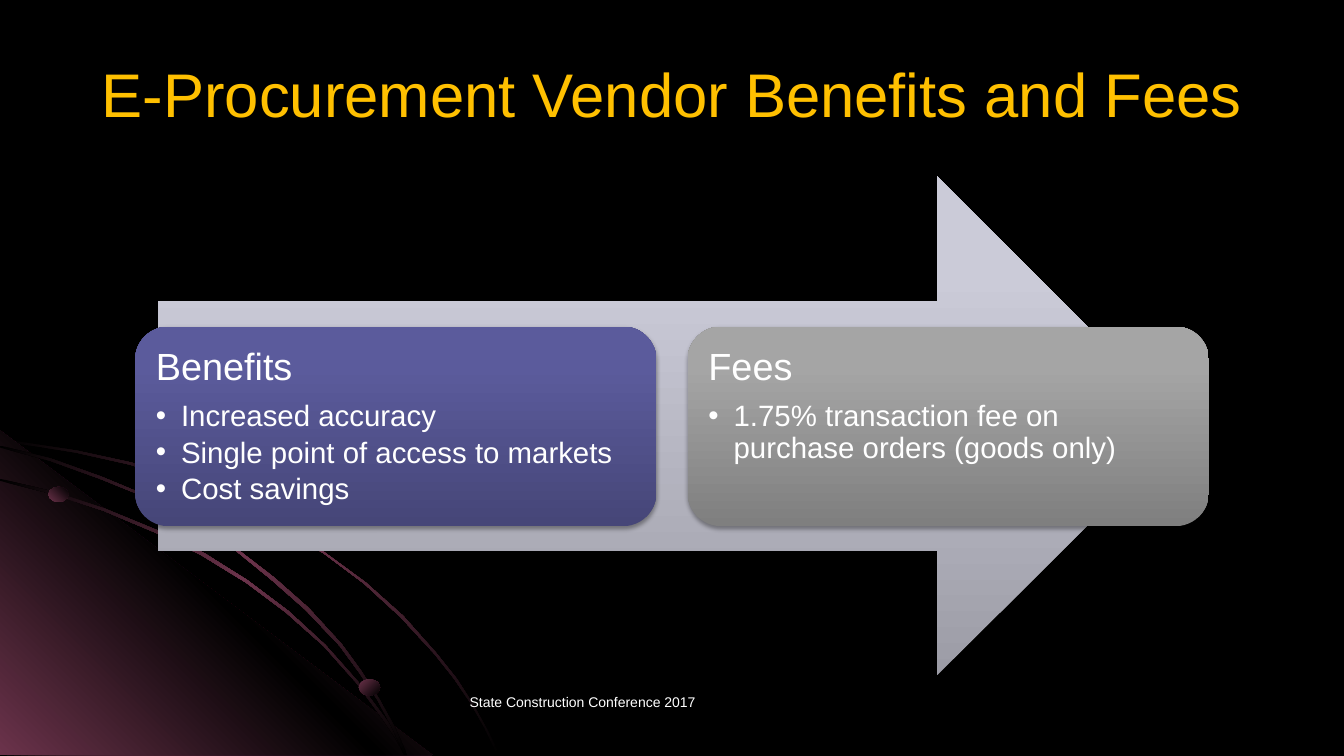
from lxml import etree
from pptx import Presentation
from pptx.dml.color import RGBColor
from pptx.enum import shapes, text
from pptx.oxml import ns
from pptx.util import Inches, Pt

FONT = "Arial"
WHITE, BLACK, GOLD, PLUM = "FFFFFF", "000000", "FFC000", "6B334B"

TITLE = "E-Procurement Vendor Benefits and Fees"
FOOTER = "State Construction Conference 2017"
CARDS = [
    ("Benefits",
     ["Increased accuracy", "Single point of access to markets", "Cost savings"],
     [(0, "464678"), (80, "5B5B9C"), (100, "5B5B9E")]),
    ("Fees",
     ["1.75% transaction fee on purchase orders (goods only)"],
     [(0, "7F7F7F"), (80, "A5A5A5"), (100, "A5A5A5")]),
]
ARROW_STOPS = [(0, "9C9CA6"), (80, "CBCBD8"), (100, "CCCCD9")]
RIBBON_STOPS = [(0, BLACK), (50, PLUM), (100, BLACK)]
CORNER_STOPS = [(0, PLUM), (50, BLACK), (100, PLUM)]
BEAD_STOPS = [(0, PLUM), (100, BLACK)]

# Corner decoration, in inches
OUTER_RIBBON = [
    (0.76, 4.47), (0.37, 4.41), (0, 4.35), (0, 4.38), (0.37, 4.43), (0.75, 4.49),
    (1.29, 4.61), (1.8, 4.78), (2.31, 4.99), (2.78, 5.23), (3.21, 5.49), (3.61, 5.79),
    (3.97, 6.12), (4.31, 6.49), (4.5, 6.73), (4.67, 6.98), (4.81, 7.23), (4.93, 7.49),
    (4.96, 7.49), (4.83, 7.23), (4.69, 6.98), (4.53, 6.73), (4.33, 6.48), (4, 6.11),
    (3.63, 5.78), (3.22, 5.48), (2.79, 5.21), (2.32, 4.97), (1.82, 4.77), (1.31, 4.59),
]
CORNER = [(4.29, 7.49), (0, 7.49), (0, 4.27)]
LOWER_RIBBON = [
    (3.8, 7.14), (3.92, 7.32), (4.01, 7.49), (4.04, 7.49), (3.94, 7.3), (3.82, 7.12),
    (3.55, 6.76), (3.23, 6.4), (2.86, 6.06), (2.46, 5.76), (2.03, 5.49), (1.56, 5.26),
    (1.05, 5.05), (0.54, 4.88), (0, 4.75), (0, 4.77), (0.51, 4.9), (1.03, 5.07),
    (1.53, 5.28), (2, 5.51), (2.44, 5.78), (2.84, 6.08), (3.21, 6.41), (3.53, 6.77),
]
MIDDLE_RIBBON = [
    (0, 4.42), (0, 4.44), (0.49, 4.57), (0.99, 4.75), (1.46, 4.94), (1.89, 5.18),
    (2.31, 5.44), (2.69, 5.75), (3.03, 6.05), (3.37, 6.41), (3.56, 6.67), (3.74, 6.94),
    (3.89, 7.22), (4.01, 7.49), (4.04, 7.49), (3.91, 7.2), (3.76, 6.93), (3.58, 6.65),
    (3.39, 6.39), (3.06, 6.03), (2.72, 5.73), (2.33, 5.43), (1.91, 5.16), (1.49, 4.93),
    (1.01, 4.73), (0.51, 4.55),
]
OUTLINES = [
    (OUTER_RIBBON, RIBBON_STOPS, 45),
    (CORNER, CORNER_STOPS, 315),
    (LOWER_RIBBON, RIBBON_STOPS, 45),
    (MIDDLE_RIBBON, RIBBON_STOPS, 45),
]
BEADS = [((0.48, 4.83, 0.2, 0.15), 315), ((3.56, 6.74, 0.21, 0.16), 45)]

CARD_LEFT, CARD_TOP, CARD_WIDTH, CARD_HEIGHT = 1.34, 3.24, 5.17, 1.98
CARD_GAP = 0.31
CARD_INSET = 0.11


def color(hex_code):
    return RGBColor.from_string(hex_code)


def add_node(parent, tag, **attributes):
    node = etree.SubElement(parent, ns.qn(tag))
    for key, value in attributes.items():
        node.set(key, str(value))
    return node


def paint(shape, stops, angle):
    """Fill with a linear gradient (clockwise degrees), without line or shadow."""
    shape.shadow.inherit = False
    shape.line.fill.background()
    shape.fill.gradient()
    gradient = shape._element.spPr.find(ns.qn("a:gradFill"))
    for child in list(gradient):
        gradient.remove(child)
    stop_list = add_node(gradient, "a:gsLst")
    for position, hex_code in stops:
        stop = add_node(stop_list, "a:gs", pos=position * 1000)
        add_node(stop, "a:srgbClr", val=hex_code)
    add_node(gradient, "a:lin", ang=angle * 60000, scaled=0)


def add_soft_shadow(shape):
    effects = shape._element.spPr.find(ns.qn("a:effectLst"))
    shadow = add_node(effects, "a:outerShdw", blurRad=Pt(3.1), dist=Pt(1.8),
                      dir=90 * 60000, rotWithShape=0)
    add_node(add_node(shadow, "a:srgbClr", val=BLACK), "a:alpha", val=35000)


def style(paragraph, size, hex_code, align=text.PP_ALIGN.LEFT):
    paragraph.alignment = align
    for run in paragraph.runs:
        run.font.name = FONT
        run.font.size = Pt(size)
        run.font.color.rgb = color(hex_code)


def add_preset(slide, kind, box, stops, angle):
    shape = slide.shapes.add_shape(kind, *map(Inches, box))
    paint(shape, stops, angle)
    return shape


def add_outline(slide, points, stops, angle):
    corners = [(Inches(x), Inches(y)) for x, y in points]
    builder = slide.shapes.build_freeform(*corners[0])
    builder.add_line_segments(corners[1:], close=True)
    paint(builder.convert_to_shape(), stops, angle)


def add_label(slide, box, wording, size, hex_code, align, anchor):
    frame = slide.shapes.add_textbox(*map(Inches, box)).text_frame
    frame.word_wrap = True
    frame.vertical_anchor = anchor
    frame.text = wording
    style(frame.paragraphs[0], size, hex_code, align)


def add_card(slide, left, heading, points, stops):
    card = add_preset(slide, shapes.MSO_SHAPE.ROUNDED_RECTANGLE,
                      (left, CARD_TOP, CARD_WIDTH, CARD_HEIGHT), stops, 270)
    add_soft_shadow(card)
    frame = card.text_frame
    frame.word_wrap = True
    frame.vertical_anchor = text.MSO_ANCHOR.TOP
    frame.margin_left = frame.margin_right = Inches(CARD_INSET)
    frame.margin_top = frame.margin_bottom = Inches(CARD_INSET)
    frame.text = "\n".join([heading, *points])
    for index, paragraph in enumerate(frame.paragraphs):
        is_point = index > 0
        size, after = (21, 0.15) if is_point else (27, 0.35)
        style(paragraph, size, WHITE)
        paragraph.line_spacing = 0.9
        paragraph.space_after = Pt(size * after)
        if is_point:
            paragraph.level = 1
            properties = paragraph._p.get_or_add_pPr()
            properties.set("marL", str(Inches(0.25)))
            properties.set("indent", str(Inches(-0.25)))
            add_node(properties, "a:buFont", typeface=FONT)
            add_node(properties, "a:buChar", char="•")


def main():
    deck = Presentation()
    deck.slide_width, deck.slide_height = Inches(13.33), Inches(7.5)
    slide = deck.slides.add_slide(deck.slide_layouts[6])
    slide.background.fill.solid()
    slide.background.fill.fore_color.rgb = color(BLACK)

    for points, stops, angle in OUTLINES:
        add_outline(slide, points, stops, angle)
    for box, angle in BEADS:
        add_preset(slide, shapes.MSO_SHAPE.OVAL, box, BEAD_STOPS, angle)

    add_label(slide, (0.67, 0.3, 12, 1.25), TITLE, 44, GOLD,
              text.PP_ALIGN.CENTER, text.MSO_ANCHOR.MIDDLE)
    add_preset(slide, shapes.MSO_SHAPE.RIGHT_ARROW, (1.57, 1.75, 10.2, 4.95),
               ARROW_STOPS, 270)
    for index, (heading, points, stops) in enumerate(CARDS):
        left = CARD_LEFT + index * (CARD_WIDTH + CARD_GAP)
        add_card(slide, left, heading, points, stops)
    add_label(slide, (4.56, 6.83, 4.22, 0.5), FOOTER, 10, WHITE,
              text.PP_ALIGN.LEFT, text.MSO_ANCHOR.TOP)

    deck.save("out.pptx")


if __name__ == "__main__":
    main()
